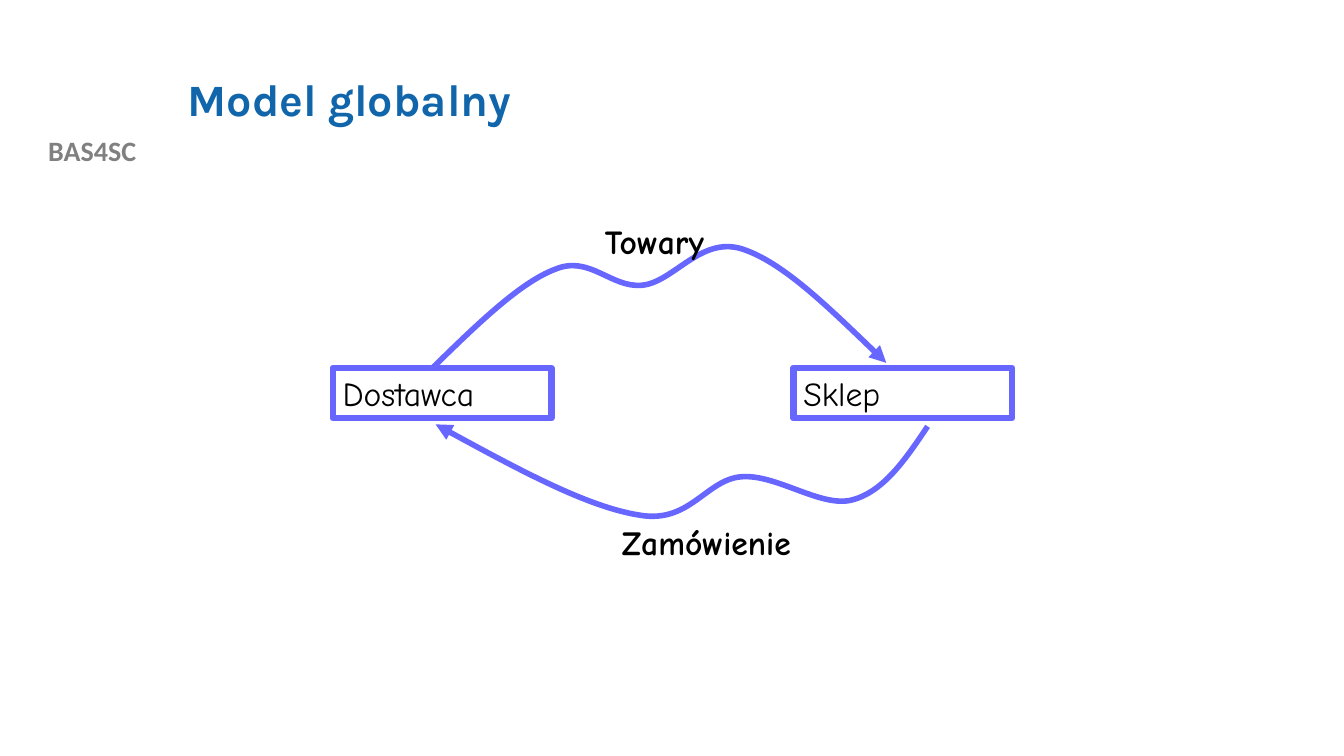
"""Build the slide with the global model of a supplier and a shop."""
import pptx
import pptx.dml.color
import pptx.enum.shapes
import pptx.enum.text
import pptx.oxml
import pptx.oxml.ns
import pptx.util
from pptx.util import Inches

TITLE_BLUE = pptx.dml.color.RGBColor(0x10, 0x65, 0xAB)
VIOLET = pptx.dml.color.RGBColor(0x67, 0x67, 0xFF)
GREY = pptx.dml.color.RGBColor(0x80, 0x80, 0x80)
BLACK = pptx.dml.color.RGBColor(0, 0, 0)
LEFT = pptx.enum.text.PP_ALIGN.LEFT
CENTER = pptx.enum.text.PP_ALIGN.CENTER
TOP = pptx.enum.text.MSO_ANCHOR.TOP
MIDDLE = pptx.enum.text.MSO_ANCHOR.MIDDLE


class ModelSlide:
    diagram_font = "Comic Neue"
    text_size = 24

    def __init__(self, deck):
        self.page = deck.slides.add_slide(deck.slide_layouts[5])

    def set_text(self, shape, text, font, size, color, bold, align=LEFT, anchor=TOP, wrap=True):
        frame = shape.text_frame
        frame.text = text
        frame.word_wrap = wrap
        frame.auto_size = pptx.enum.text.MSO_AUTO_SIZE.NONE
        frame.vertical_anchor = anchor
        para = frame.paragraphs[0]
        para.alignment = align
        span = para.runs[0].font
        span.name, span.size, span.bold = font, pptx.util.Pt(size), bold
        span.color.rgb = color
        return para

    def outline(self, shape, width):
        shape.shadow.inherit = False
        shape.fill.background()
        shape.line.color.rgb = VIOLET
        shape.line.width = pptx.util.Pt(width)

    def title(self, text, left, top, width, height):
        shape = self.page.shapes.title
        shape.left, shape.top = Inches(left), Inches(top)
        shape.width, shape.height = Inches(width), Inches(height)
        para = self.set_text(shape, text, "Karla", 32, TITLE_BLUE, True, anchor=MIDDLE)
        para.line_spacing = 0.9

    def project_name(self, text, left, top, width, height):
        box = self.page.shapes.add_textbox(*map(Inches, (left, top, width, height)))
        self.set_text(box, text, "Calibri", 20, GREY, True, align=CENTER)

    def label(self, text, left, top, width):
        box = self.page.shapes.add_textbox(*map(Inches, (left, top, width, 0.51)))
        self.set_text(box, text, self.diagram_font, self.text_size, BLACK, True, wrap=False)

    def party(self, text, left):
        box = self.page.shapes.add_shape(
            pptx.enum.shapes.MSO_SHAPE.RECTANGLE, *map(Inches, (left, 3.65, 2.17, 0.5)))
        self.outline(box, 4.5)
        self.set_text(box, text, self.diagram_font, self.text_size, BLACK, False)

    def curved_arrow(self, start, controls):
        builder = self.page.shapes.build_freeform(*map(Inches, start))
        builder.add_line_segments([(Inches(x), Inches(y)) for x, y in controls], close=False)
        curve = builder.convert_to_shape()
        self.outline(curve, 4)
        lines = list(curve.element.iter(pptx.oxml.ns.qn("a:lnTo")))
        for first in range(0, len(lines), 3):
            bezier = pptx.oxml.parse_xml(f"<a:cubicBezTo {pptx.oxml.ns.nsdecls('a')}/>")
            lines[first].addprevious(bezier)
            for line in lines[first:first + 3]:
                bezier.append(line[0])
                line.getparent().remove(line)
        stroke = next(curve.element.iter(pptx.oxml.ns.qn("a:ln")))
        stroke.append(
            pptx.oxml.parse_xml(f'<a:tailEnd {pptx.oxml.ns.nsdecls("a")} type="triangle"/>'))


def main():
    deck = pptx.Presentation()
    deck.slide_width, deck.slide_height = Inches(13.33), Inches(7.5)
    slide = ModelSlide(deck)
    slide.project_name("BAS4SC", 0, 1.28, 1.83, 0.43)
    slide.title("Model globalny", 1.76, 0.4, 10.66, 1.22)
    slide.party("Dostawca", 3.3)
    slide.party("Sklep", 7.87)
    slide.curved_arrow((4.3, 3.64), [
        (4.73, 3.22), (5.16, 2.8), (5.51, 2.67),
        (5.85, 2.53), (6.06, 2.86), (6.37, 2.83),
        (6.68, 2.8), (6.95, 2.34), (7.36, 2.47),
        (7.76, 2.6), (8.27, 3.1), (8.79, 3.6)])
    slide.curved_arrow((9.2, 4.23), [
        (8.98, 4.56), (8.76, 4.88), (8.45, 4.96),
        (8.14, 5.04), (7.7, 4.7), (7.35, 4.73),
        (7, 4.76), (6.84, 5.2), (6.34, 5.11),
        (5.83, 5.03), (5.07, 4.62), (4.32, 4.21)])
    slide.label("Towary", 5.9, 2.14, 1.38)
    slide.label("Zamówienie", 6.07, 5.13, 2.03)
    deck.save("out.pptx")


if __name__ == "__main__":
    main()
